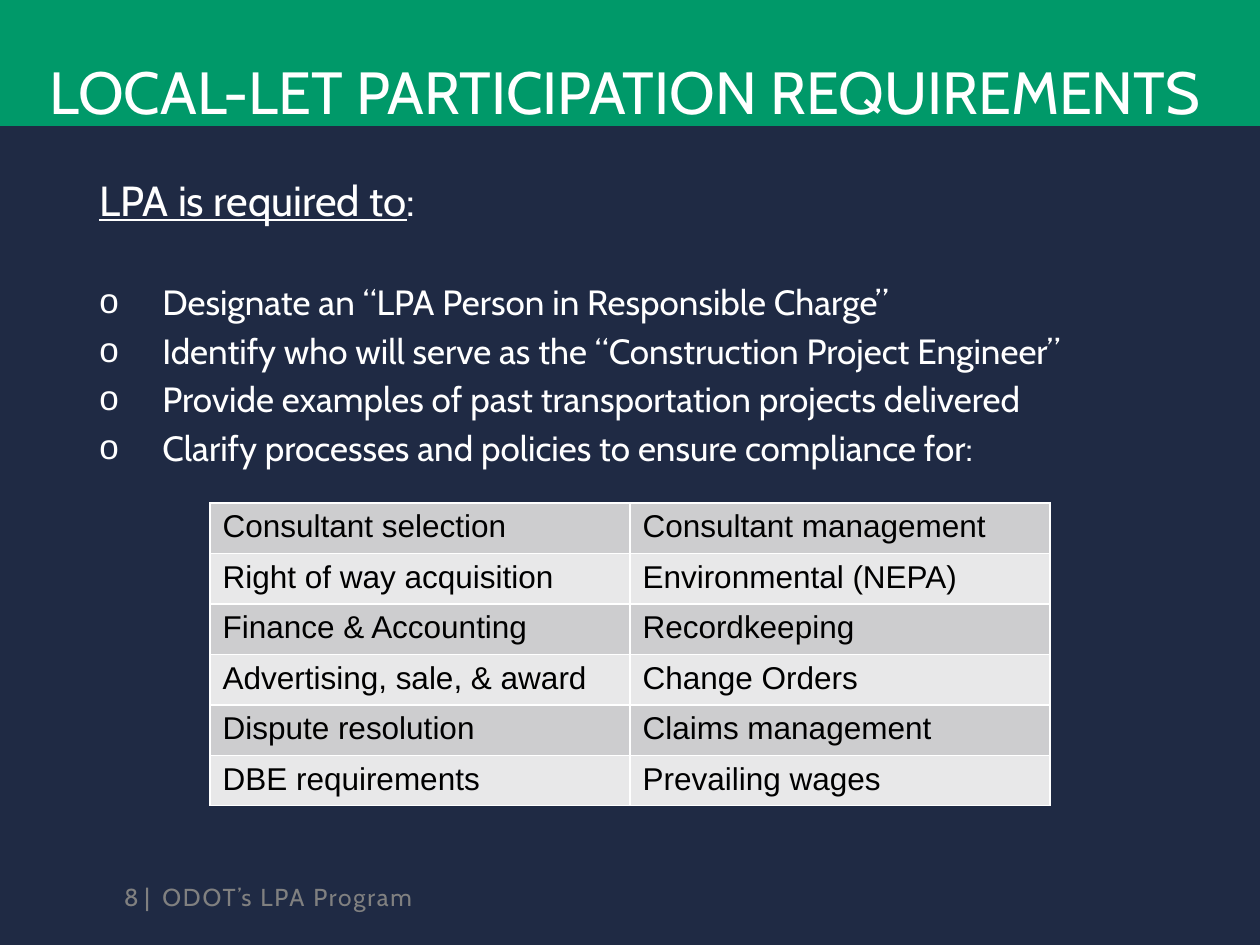
from dataclasses import dataclass

from lxml.etree import SubElement
from pptx import Presentation
from pptx.dml.color import RGBColor
from pptx.enum.shapes import MSO_SHAPE
from pptx.enum.text import MSO_ANCHOR, PP_ALIGN
from pptx.oxml.ns import qn
from pptx.util import Emu, Pt

TITLE = "LOCAL-LET PARTICIPATION REQUIREMENTS"
LEAD = "LPA is required to"
DUTIES = [
    "Designate an “LPA Person in Responsible Charge”",
    "Identify who will serve as the “Construction Project Engineer”",
    "Provide examples of past transportation projects delivered",
    "Clarify processes and policies to ensure compliance for:",
]
COMPLIANCE_AREAS = [
    ("Consultant selection", "Consultant management"),
    ("Right of way acquisition", "Environmental (NEPA)"),
    ("Finance & Accounting", "Recordkeeping"),
    ("Advertising, sale, & award", "Change Orders"),
    ("Dispute resolution", "Claims management"),
    ("DBE requirements", "Prevailing wages"),
]
PAGE_MARK = "8 |"
FOOTER = "ODOT’s LPA Program"


@dataclass(frozen=True)
class Theme:
    navy: str = "1F2A44"
    green: str = "009969"
    white: str = "FFFFFF"
    black: str = "000000"
    grey: str = "808080"
    bands: tuple = ("CDCDCF", "E8E8E9")
    font: str = "Cabin"
    table_font: str = "Arial"
    title_size: int = 34
    lead_size: int = 24
    duty_size: int = 20
    table_size: int = 18
    footer_size: int = 14


THEME = Theme()
EMU_PER_PX = 914400 / 126
SLIDE_W, SLIDE_H = 1260, 945
BANNER_H = 126
BODY = (87, 168, 1086, 662)
TABLE_LEFT, TABLE_TOP, COLUMN_W, ROW_H = 210, 503, 420, 50
FOOTER_TOP, FOOTER_H = 872, 50
PAGE_LEFT, FOOTER_LEFT, FOOTER_W = 101, 150, 764
DUTY_INDENT = 63
LEAD_GAP, DUTY_GAP = 32, 3.7


def px(value):
    return Emu(round(value * EMU_PER_PX))


def rgb(code):
    return RGBColor.from_string(code)


def add_run(paragraph, text, size, color, font=THEME.font):
    run = paragraph.add_run()
    run.text = text
    run.font.name = font
    run.font.size = Pt(size)
    run.font.color.rgb = rgb(color)
    return run


def set_margins(frame, left, top, right, bottom):
    frame.margin_left, frame.margin_top = px(left), px(top)
    frame.margin_right, frame.margin_bottom = px(right), px(bottom)


def add_text_frame(slide, left, top, width, height, anchor=MSO_ANCHOR.TOP):
    frame = slide.shapes.add_textbox(px(left), px(top), px(width), px(height)).text_frame
    frame.word_wrap = True
    frame.vertical_anchor = anchor
    return frame


def add_bullet(paragraph):
    properties = paragraph._p.get_or_add_pPr()
    properties.set("marL", str(px(DUTY_INDENT)))
    properties.set("indent", str(-px(DUTY_INDENT)))
    SubElement(properties, qn("a:buFont"), typeface=THEME.table_font)
    SubElement(properties, qn("a:buChar"), char="o")


def add_borders(cell):
    properties = cell._tc.get_or_add_tcPr()
    for side in ("lnL", "lnR", "lnT", "lnB"):
        border = SubElement(properties, qn(f"a:{side}"), w=str(Pt(1)))
        fill = SubElement(border, qn("a:solidFill"))
        SubElement(fill, qn("a:srgbClr"), val=THEME.white)


def add_banner(slide):
    banner = slide.shapes.add_shape(MSO_SHAPE.RECTANGLE, 0, 0, px(SLIDE_W), px(BANNER_H))
    banner.shadow.inherit = False
    banner.fill.solid()
    banner.fill.fore_color.rgb = rgb(THEME.green)
    banner.line.fill.background()
    frame = banner.text_frame
    frame.word_wrap = True
    frame.vertical_anchor = MSO_ANCHOR.BOTTOM
    set_margins(frame, 50, 13, 50, 0)
    title = frame.paragraphs[0]
    title.alignment = PP_ALIGN.LEFT
    add_run(title, TITLE, THEME.title_size, THEME.white)


def add_duties(slide):
    frame = add_text_frame(slide, *BODY)
    lead = frame.paragraphs[0]
    add_run(lead, LEAD, THEME.lead_size, THEME.white).font.underline = True
    add_run(lead, ":", THEME.lead_size, THEME.white)
    for index, duty in enumerate(DUTIES):
        paragraph = frame.add_paragraph()
        add_bullet(paragraph)
        paragraph.space_before = Pt(DUTY_GAP if index else LEAD_GAP)
        add_run(paragraph, duty, THEME.duty_size, THEME.white)


def add_compliance_table(slide):
    rows, columns = len(COMPLIANCE_AREAS), len(COMPLIANCE_AREAS[0])
    table = slide.shapes.add_table(
        rows, columns, px(TABLE_LEFT), px(TABLE_TOP),
        px(columns * COLUMN_W), px(rows * ROW_H)).table
    table.first_row = False
    for row, areas in enumerate(COMPLIANCE_AREAS):
        for column, area in enumerate(areas):
            cell = table.cell(row, column)
            add_borders(cell)
            cell.fill.solid()
            cell.fill.fore_color.rgb = rgb(THEME.bands[row % 2])
            add_run(cell.text_frame.paragraphs[0], area,
                    THEME.table_size, THEME.black, THEME.table_font)


def add_footer(slide):
    page = add_text_frame(slide, PAGE_LEFT, FOOTER_TOP, FOOTER_LEFT - PAGE_LEFT,
                          FOOTER_H, MSO_ANCHOR.MIDDLE)
    set_margins(page, 0, 0, 0, 0)
    page.paragraphs[0].alignment = PP_ALIGN.RIGHT
    add_run(page.paragraphs[0], PAGE_MARK, THEME.footer_size, THEME.grey)
    program = add_text_frame(slide, FOOTER_LEFT, FOOTER_TOP, FOOTER_W,
                             FOOTER_H, MSO_ANCHOR.MIDDLE)
    run = add_run(program.paragraphs[0], FOOTER, THEME.footer_size, THEME.grey)
    run._r.get_or_add_rPr().set("spc", "100")


def main():
    deck = Presentation()
    deck.slide_width, deck.slide_height = px(SLIDE_W), px(SLIDE_H)
    slide = deck.slides.add_slide(deck.slide_layouts[6])
    slide.background.fill.solid()
    slide.background.fill.fore_color.rgb = rgb(THEME.navy)
    add_banner(slide)
    add_duties(slide)
    add_footer(slide)
    add_compliance_table(slide)
    deck.save("out.pptx")


if __name__ == "__main__":
    main()
